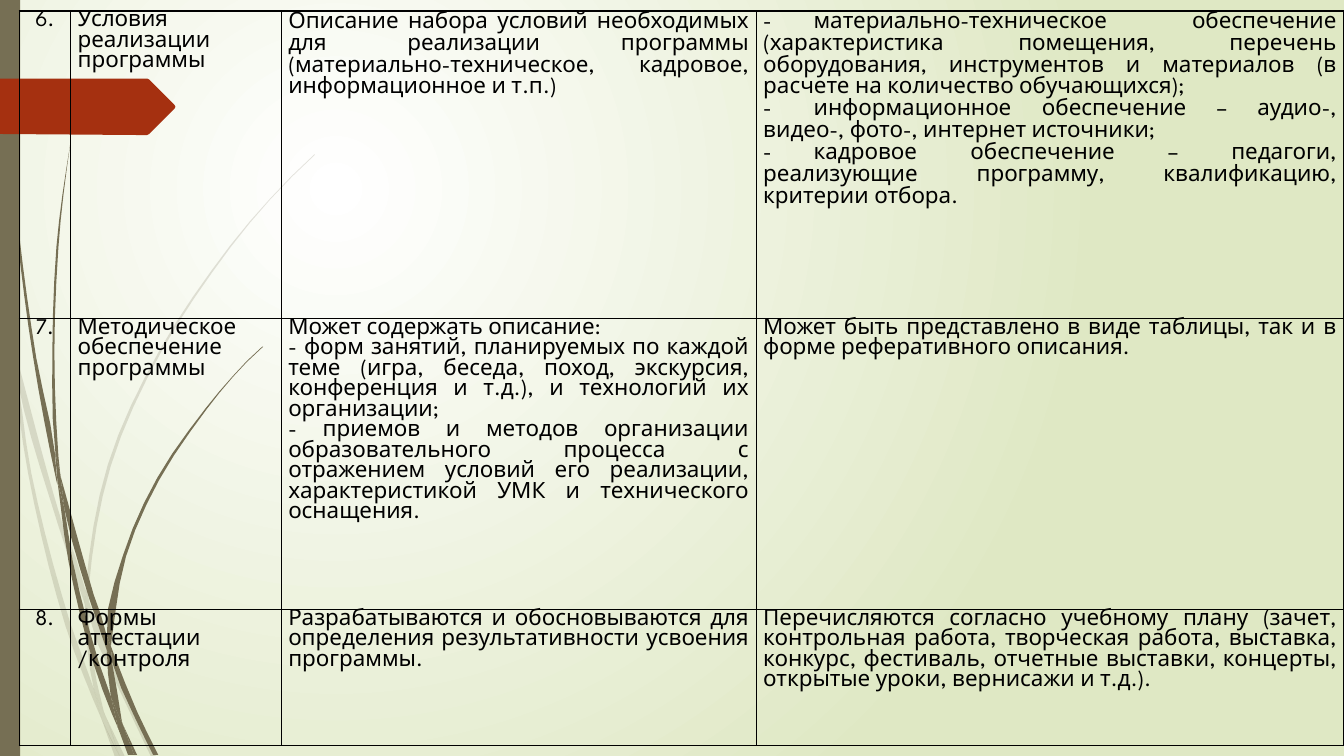
from dataclasses import dataclass
from math import ceil, cos, dist, radians
from typing import NamedTuple

from lxml.etree import SubElement
from pptx import Presentation
from pptx.dml.color import RGBColor as RGB
from pptx.enum.shapes import MSO_SHAPE as SHAPE
from pptx.enum.text import PP_ALIGN as ALIGN
from pptx.oxml import parse_xml
from pptx.oxml.ns import nsdecls, qn
from pptx.util import Inches, Pt

Point = tuple[float, float]


@dataclass(frozen=True)
class Theme:
    stem: str = "766F54"
    arrow: str = "A53010"
    glow: str = "FFFFFF"
    field: str = "DFE8C4"
    ink: str = "000000"
    font: str = "League Spartan"
    size: float = 16
    border: float = 1


class Plant(NamedTuple):
    opacity: int
    blades: list[list[Point]]


class Entry(NamedTuple):
    paragraphs: list[str]
    spacing: float | None = None
    align: ALIGN = ALIGN.JUSTIFY


THEME = Theme()
CORNER = cos(radians(50))
CHORD = .35

# Grass outlines, as knots of smooth curves
FAINT_GRASS = Plant(20, [
    [(.11, 3.5), (.09, 3.22), (0, 2.82), (0, 2.99), (.1, 3.44)],
    [(.58, 5.22), (.84, 5.99), (.85, 5.86), (.62, 5.2), (.14, 3.45), (.17, 3.76)],
    [(.92, 6.07), (.88, 5.96), (.88, 6.1), (1.23, 6.94), (1.5, 7.51), (1.55, 7.51), (1.27, 6.92)],
    [(1.19, 7.51), (1.24, 7.51), (1.05, 7.11)],
    [(.93, 6.83), (.7, 6.19), (.31, 4.69), (.17, 3.76), (.11, 3.5), (.28, 4.7), (.65, 6.21),
     (.92, 6.93), (1.01, 7.14), (.99, 7.07)],
    [(.84, 5.99), (.87, 6.46), (.93, 6.83), (.96, 6.92), (1.05, 7.11), (1.03, 7.06), (.91, 6.46),
     (.88, 6.1), (.88, 6.08)],
    [(.88, 5.84), (1.1, 4.62), (1.6, 3.49), (2.29, 2.45), (2.68, 1.98), (2.9, 1.75), (3.12, 1.54),
     (3.12, 1.53), (2.89, 1.75), (2.68, 1.97), (2.28, 2.44), (1.58, 3.48), (1.07, 4.61),
     (.85, 5.84), (.85, 5.86), (.88, 5.96)],
    [(1.01, 7.14), (1.14, 7.51), (1.19, 7.51)],
    [(.88, 6.08), (.88, 6.1), (.88, 5.96), (.85, 5.86), (.84, 5.99)],
    [(.96, 6.92), (.93, 6.83), (.99, 7.07), (1.01, 7.14), (1.19, 7.51), (1.05, 7.11)],
])
DARK_GRASS = Plant(100, [
    [(.07, 1.1), (.17, 2.33), (.33, 3.55), (.56, 4.77), (.57, 4.81), (.55, 4.57), (.55, 4.53),
     (.36, 3.55), (.19, 2.32), (.08, 1.09), (.05, .48), (.04, 0), (.03, 0), (.04, .48)],
    [(.88, 5.92), (1.06, 6.45), (1.06, 6.31), (.93, 5.9), (.6, 4.72), (.64, 5.05)],
    [(1.13, 6.49), (1.1, 6.41), (1.11, 6.56), (1.32, 7.08), (1.52, 7.49), (1.57, 7.49), (1.36, 7.06)],
    [(1.1, 6.91), (.98, 6.57), (.72, 5.56), (.64, 5.05), (.57, 4.77), (.68, 5.57), (.93, 6.59),
     (1.11, 7.08), (1.17, 7.22), (1.16, 7.17)],
    [(.6, 4.72), (.58, 4.53), (.54, 3.49), (.58, 2.45), (.63, 1.93), (.7, 1.41), (.62, 1.93),
     (.56, 2.45), (.52, 3.49), (.55, 4.49)],
    [(1.33, 7.49), (1.36, 7.49), (1.22, 7.19)],
    [(.57, 4.77), (.64, 5.05), (.6, 4.72), (.55, 4.49), (.55, 4.53)],
    [(1.11, 6.33), (1.25, 5.52), (1.58, 4.76), (2.05, 4.06), (2.31, 3.74), (2.45, 3.59), (2.61, 3.44),
     (2.6, 3.44), (2.45, 3.58), (2.31, 3.73), (2.04, 4.05), (1.56, 4.74), (1.22, 5.51),
     (1.06, 6.31), (1.1, 6.41)],
    [(1.17, 7.22), (1.27, 7.49), (1.31, 7.49)],
    [(1.06, 6.45), (1.1, 6.91), (1.16, 7.06), (1.22, 7.19), (1.21, 7.16), (1.11, 6.56), (1.09, 6.51)],
    [(1.06, 6.45), (1.09, 6.51), (1.11, 6.56), (1.1, 6.41), (1.06, 6.31)],
    [(1.16, 7.06), (1.1, 6.91), (1.16, 7.17), (1.17, 7.22), (1.3, 7.49), (1.33, 7.49), (1.22, 7.19)],
])
ARROW = [(1.73, 1.08), (1.48, 1.33), (1.46, 1.34), (1.36, 1.34), (0, 1.33), (0, .78),
         (1.46, .78), (1.48, .79), (1.73, 1.04), (1.74, 1.06)]

# Table content
COLUMNS = [.51, 2.09, 4.71, 5.83]
ROWS = [3.05, 2.89, 1.35]
PROGRAMME = [
    [Entry(["6."], align=ALIGN.CENTER),
     Entry(["Условия реализации программы"]),
     Entry(["Описание набора условий необходимых для реализации программы "
            "(материально-техническое, кадровое, информационное и т.п.)"], 1.07),
     Entry(["-\tматериально-техническое обеспечение (характеристика помещения, перечень оборудования, "
            "инструментов и материалов (в расчете на количество обучающихся); ",
            "-\tинформационное обеспечение – аудио-, видео-, фото-, интернет источники; ",
            "-\tкадровое обеспечение – педагоги, реализующие программу, квалификацию, "
            "критерии отбора."], 1.07)],
    [Entry(["7."], align=ALIGN.CENTER),
     Entry(["Методическое обеспечение программы "]),
     Entry(["Может содержать описание: ",
            "- форм занятий, планируемых по каждой теме (игра, беседа, поход, экскурсия, "
            "конференция и т.д.), и технологий их организации; ",
            "- приемов и методов организации образовательного процесса с отражением условий "
            "его реализации, характеристикой УМК и технического оснащения."]),
     Entry(["Может быть представлено в виде таблицы, так и в форме реферативного описания."])],
    [Entry(["8."], align=ALIGN.CENTER),
     Entry(["Формы аттестации", "/контроля"]),
     Entry(["Разрабатываются и обосновываются для определения результативности усвоения программы."]),
     Entry(["Перечисляются согласно учебному плану (зачет, контрольная работа, творческая работа, "
            "выставка, конкурс, фестиваль, отчетные выставки, концерты, открытые уроки, "
            "вернисажи и т.д.)."])],
]


def apply(target: object, values: dict) -> None:
    for name, value in values.items():
        setattr(target, name, value)


def unit(a: Point, b: Point) -> Point:
    length = dist(a, b)
    return (b[0] - a[0]) / length, (b[1] - a[1]) / length


def smooth_outline(knots: list[Point]) -> list[Point]:
    """Round the outline through its knots, keeping sharp tips."""
    count = len(knots)
    outline = []
    headings = [unit(knots[i], knots[(i + 1) % count]) for i in range(count)]

    def tangent(i: int, own: Point) -> Point:
        before, after = headings[i - 1], headings[i]
        if before[0] * after[0] + before[1] * after[1] < CORNER:
            return own
        return unit((0, 0), (before[0] + after[0], before[1] + after[1]))

    for i, start in enumerate(knots):
        following = (i + 1) % count
        end = knots[following]
        length = dist(start, end)
        steps = ceil(length / CHORD)
        leave, arrive = tangent(i, headings[i]), tangent(following, headings[i])
        for t in (step / steps for step in range(steps)):
            ease = t * t * (3 - 2 * t)
            pull, push = t * (1 - t) ** 2 * length, t * t * (t - 1) * length
            outline.append(tuple(start[k] * (1 - ease) + end[k] * ease + leave[k] * pull + arrive[k] * push
                                 for k in (0, 1)))
    return outline


def paint(shape, colour: str, opacity: int = 100) -> None:
    shape.shadow.inherit = False
    shape.fill.solid()
    shape.fill.fore_color.rgb = RGB.from_string(colour)
    shape.line.fill.background()
    if opacity < 100:
        SubElement(shape.element.find(".//" + qn("a:srgbClr")), qn("a:alpha"), val=str(opacity * 1000))


def draw_outline(slide, outline: list[Point], colour: str, opacity: int = 100) -> None:
    points = [(Inches(x), Inches(y)) for x, y in outline]
    builder = slide.shapes.build_freeform(*points[0])
    builder.add_line_segments(points[1:], close=True)
    paint(builder.convert_to_shape(), colour, opacity)


def draw_background(slide) -> None:
    fill = slide.background.fill
    fill.gradient()
    for stop, position, colour in zip(fill.gradient_stops, (0, 1), (THEME.glow, THEME.field)):
        stop.position = position
        stop.color.rgb = RGB.from_string(colour)
    gradient = slide.element.find(".//" + qn("a:gradFill"))
    gradient.replace(gradient.find(qn("a:lin")), parse_xml(
        f'<a:path {nsdecls("a")} path="circle">'
        '<a:fillToRect l="50000" t="50000" r="100000" b="100000"/></a:path>'))


def fill_cell(cell, entry: Entry) -> None:
    apply(cell, {"margin_left": Inches(.07), "margin_right": Inches(.07), "margin_top": 0, "margin_bottom": 0})
    cell.fill.background()
    cell.text = "\n".join(entry.paragraphs)
    for paragraph in cell.text_frame.paragraphs:
        apply(paragraph, {"alignment": entry.align, "line_spacing": entry.spacing})
        font = paragraph.runs[0].font
        apply(font, {"name": THEME.font, "size": Pt(THEME.size), "bold": False})
        font.color.rgb = RGB.from_string(THEME.ink)


def draw_programme(slide) -> None:
    frame = slide.shapes.add_table(len(ROWS), len(COLUMNS), Inches(.19), Inches(.11),
                                   Inches(sum(COLUMNS)), Inches(sum(ROWS)))
    table = frame.table
    apply(table, {"first_row": False, "horz_banding": False})
    for column, width in zip(table.columns, COLUMNS):
        column.width = Inches(width)
    for r, (height, entries) in enumerate(zip(ROWS, PROGRAMME)):
        table.rows[r].height = Inches(height)
        for c, entry in enumerate(entries):
            fill_cell(table.cell(r, c), entry)
    # Cell borders
    for properties in frame.element.iter(qn("a:tcPr")):
        for i, side in enumerate("LRTB"):
            properties.insert(i, parse_xml(
                f'<a:ln{side} {nsdecls("a")} w="{Pt(THEME.border)}"><a:solidFill>'
                f'<a:srgbClr val="{THEME.ink}"/></a:solidFill></a:ln{side}>'))
    # Tab stops after the dashes
    for paragraph in frame.element.iter(qn("a:p")):
        if "\t" in "".join(paragraph.itertext()):
            tabs = SubElement(paragraph.find(qn("a:pPr")), qn("a:tabLst"))
            SubElement(tabs, qn("a:tab"), pos=str(Inches(.5)), algn="l")


def main() -> None:
    deck = Presentation()
    apply(deck, {"slide_width": Inches(13.33), "slide_height": Inches(7.5)})
    slide = deck.slides.add_slide(deck.slide_layouts[6])
    draw_background(slide)
    # Grass, side strip and arrow
    for plant in (FAINT_GRASS, DARK_GRASS):
        for blade in plant.blades:
            draw_outline(slide, smooth_outline(blade), THEME.stem, plant.opacity)
    paint(slide.shapes.add_shape(SHAPE.RECTANGLE, 0, 0, Inches(.2), Inches(7.5)), THEME.stem)
    draw_outline(slide, ARROW, THEME.arrow)
    draw_programme(slide)
    deck.save("out.pptx")


if __name__ == "__main__":
    main()
